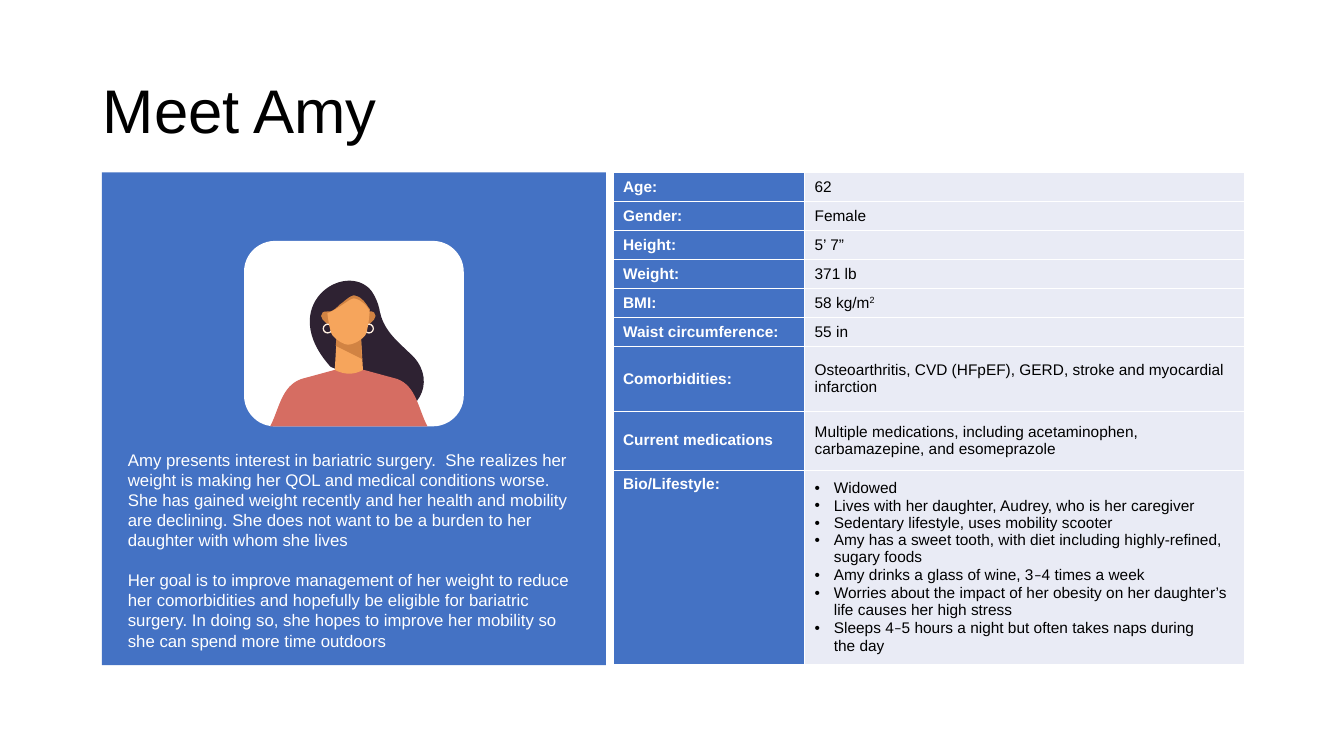
"""Build the patient profile slide for Amy."""
from itertools import groupby

from lxml.etree import SubElement
from pptx import Presentation
from pptx.dml.color import RGBColor
from pptx.enum.shapes import MSO_SHAPE
from pptx.enum.text import MSO_ANCHOR, MSO_AUTO_SIZE, PP_ALIGN
from pptx.oxml.ns import qn
from pptx.util import Inches, Pt

BLUE, PALE = RGBColor(0x44, 0x72, 0xC4), RGBColor(0xE9, 0xEB, 0xF5)
WHITE, BLACK = RGBColor(0xFF, 0xFF, 0xFF), RGBColor(0, 0, 0)
HAIR, SHIRT = RGBColor(0x2E, 0x22, 0x32), RGBColor(0xD6, 0x6D, 0x62)
SKIN, SHADE = RGBColor(0xF6, 0xA5, 0x5C), RGBColor(0xD1, 0x83, 0x43)
RING = RGBColor(0xFF, 0xEF, 0xE0)

STORY = [
    "Amy presents interest in bariatric surgery.  She realizes her weight is making her QOL and "
    "medical conditions worse.  She has gained weight recently and her health and mobility are "
    "declining. She does not want to be a burden to her daughter with whom she lives",
    "Her goal is to improve management of her weight to reduce her comorbidities and hopefully "
    "be eligible for bariatric surgery. In doing so, she hopes to improve her mobility so she "
    "can spend more time outdoors",
]
HABITS = [
    "Widowed",
    "Lives with her daughter, Audrey, who is her caregiver",
    "Sedentary lifestyle, uses mobility scooter",
    "Amy has a sweet tooth, with diet including highly-refined, sugary foods",
    "Amy drinks a glass of wine, 3–4 times a week",
    "Worries about the impact of her obesity on her daughter’s life causes her high stress",
    "Sleeps 4–5 hours a night but often takes naps during \nthe day",
]
FACTS = [
    ("Age:", ["62"], 0.29),
    ("Gender:", ["Female"], 0.29),
    ("Height:", ["5’ 7”"], 0.29),
    ("Weight:", ["371 lb"], 0.29),
    ("BMI:", ["58 kg/m²"], 0.29),
    ("Waist circumference:", ["55 in"], 0.29),
    ("Comorbidities:", ["Osteoarthritis, CVD (HFpEF), GERD, stroke and myocardial infarction"], 0.65),
    ("Current medications",
     ["Multiple medications, including acetaminophen, carbamazepine, and esomeprazole"], 0.59),
    ("Bio/Lifestyle:", HABITS, 1.95),
]

EAR = [(3.24, 3.21), (3.25, 3.23, 3.29, 3.23, 3.31, 3.21), (3.33, 3.2, 3.33, 3.17, 3.31, 3.15),
       (3.28, 3.11), (3.26, 3.09, 3.23, 3.08, 3.2, 3.1), (3.18, 3.12, 3.18, 3.15, 3.2, 3.17)]
BACK = [
    (HAIR, [(3.28, 3.64), (2.73, 3.03, 3.42, 2.58, 3.68, 2.88), (3.78, 3.02, 3.93, 3.4, 3.33, 3.66)]),
    (HAIR, [(3.77, 3.1), (3.81, 3.29, 3.97, 3.41, 4.06, 3.5),
            (4.33, 3.73, 4.2, 4.1, 3.83, 4.12), (3.42, 3.62)]),
    (SHIRT, [(3.94, 3.76), (3.61, 3.67), (3.32, 3.67), (2.99, 3.76), (2.79, 3.83, 2.77, 4.06, 2.68, 4.23),
             (4.24, 4.23), (4.15, 4.06, 4.13, 3.83, 3.94, 3.76)]),
    (SKIN, [(3.6, 3.67), (3.58, 3.34), (3.34, 3.34), (3.32, 3.67), (3.42, 3.72, 3.51, 3.72, 3.6, 3.67)]),
    (SHADE, [(3.59, 3.56), (3.58, 3.34), (3.34, 3.34), (3.33, 3.43)]),
]
FRONT = [
    (SKIN, [(3.52, 2.87), (3.4, 2.87), (3.33, 2.87, 3.24, 2.91, 3.24, 3.02),
            (3.24, 3.09, 3.27, 3.3, 3.3, 3.33), (3.34, 3.38, 3.42, 3.42, 3.45, 3.42),
            (3.5, 3.42, 3.58, 3.38, 3.62, 3.33), (3.65, 3.3, 3.67, 3.09, 3.67, 3.02),
            (3.67, 2.91, 3.58, 2.87, 3.52, 2.87)]),
    (SHADE, [(3.26, 3.1), (3.3, 3.09, 3.43, 3, 3.46, 2.98), (3.48, 2.97, 3.49, 2.96, 3.51, 2.96),
             (3.53, 2.96, 3.55, 2.97, 3.57, 2.98), (3.63, 3.02, 3.65, 3.05, 3.67, 3.09), (3.67, 3.07),
             (3.65, 3.03, 3.63, 2.98, 3.57, 2.95), (3.55, 2.94, 3.53, 2.93, 3.51, 2.93),
             (3.49, 2.93, 3.48, 2.93, 3.46, 2.94), (3.43, 2.96, 3.4, 2.99, 3.37, 3.02),
             (3.34, 3.04, 3.3, 3.07, 3.26, 3.08), (3.24, 3.09), (3.24, 3.11)]),
    (HAIR, [(3.46, 2.82), (3.27, 2.82, 3.23, 2.95, 3.22, 3.09), (3.27, 3.09),
            (3.31, 3.08, 3.34, 3.05, 3.37, 3.02), (3.4, 3, 3.43, 2.97, 3.46, 2.95),
            (3.48, 2.94, 3.49, 2.93, 3.51, 2.93), (3.53, 2.93, 3.55, 2.94, 3.57, 2.95),
            (3.63, 2.99, 3.65, 3.05, 3.68, 3.08), (3.75, 3.05, 3.67, 2.8, 3.46, 2.82)]),
]


def apply(item, values):
    """Set each named value on the item."""
    for name, value in values.items():
        setattr(item, name, value)


def write(par, text, size, color, bold=False):
    """Write runs, with line breaks, raised digits and dashes in their own font."""
    for mark, group in groupby(text, lambda sign: sign if sign in "–²\n" else ""):
        if mark == "\n":
            par.add_line_break()
            continue
        run = par.add_run()
        run.text = "2" if mark == "²" else "".join(group)
        apply(run.font, {"name": "Calibri" if mark == "–" else "Arial", "size": Pt(size), "bold": bold})
        run.font.color.rgb = color
        if mark == "²":
            run._r.get_or_add_rPr().set("baseline", "30000")


def bullet(par):
    """Give a paragraph a hanging round bullet."""
    props = par._p.get_or_add_pPr()
    apply_to = {"marL": Inches(0.19), "indent": Inches(-0.19)}
    for name, value in apply_to.items():
        props.set(name, str(value))
    SubElement(props, qn("a:buFont"), typeface="Arial")
    SubElement(props, qn("a:buChar"), char="•")


def paint(shape, color):
    """Fill a shape plainly, without line or shadow."""
    shape.shadow.inherit = False
    shape.fill.solid()
    shape.fill.fore_color.rgb = color
    shape.line.fill.background()


def block(shapes, kind, box, color):
    """Add a plain preset shape."""
    shape = shapes.add_shape(kind, *map(Inches, box))
    paint(shape, color)
    return shape


def outline(shapes, parts, color):
    """Add a closed outline of straight lines and cubic curves."""
    dots = [(round(part[i] * 1000), round(part[i + 1] * 1000))
            for part in parts for i in range(0, len(part), 2)]
    maker = shapes.build_freeform(*dots[0], scale=Inches(1) / 1000)
    maker.add_line_segments(dots[1:], close=False)
    shape = maker.convert_to_shape()
    route = shape._element.find(f".//{qn('a:path')}")
    lines = iter(route.findall(qn("a:lnTo")))
    for part in parts[1:]:
        knots = [next(lines) for _ in range(len(part) // 2)]
        if len(knots) == 3:
            curve = SubElement(route, qn("a:cubicBezTo"))
            knots[0].addprevious(curve)
            for knot in knots:
                curve.append(knot[0])
                route.remove(knot)
    SubElement(route, qn("a:close"))
    paint(shape, color)


def flip(parts, axis=3.455):
    """Mirror an outline left to right."""
    return [tuple(v if i % 2 else 2 * axis - v for i, v in enumerate(part)) for part in parts]


def avatar(slide):
    """Draw the woman on her white card."""
    block(slide.shapes, MSO_SHAPE.ROUNDED_RECTANGLE, (2.42, 2.39, 2.18, 1.84), WHITE)
    shapes = slide.shapes.add_group_shape().shapes
    for color, parts in BACK:
        outline(shapes, parts, color)
    for ear, left in ((EAR, 3.2), (flip(EAR), 3.61)):
        outline(shapes, ear, SHADE)
        block(shapes, MSO_SHAPE.DONUT, (left, 3.21, 0.1, 0.1), RING).adjustments[0] = 0.13
    for color, parts in FRONT:
        outline(shapes, parts, color)


def heading(slide):
    """Place and format the title."""
    title = slide.shapes.title
    apply(title, dict(zip(("left", "top", "width", "height"), map(Inches, (0.92, 0.4, 11.5, 1.45)))))
    title.text_frame.vertical_anchor = MSO_ANCHOR.MIDDLE
    par = title.text_frame.paragraphs[0]
    apply(par, {"alignment": PP_ALIGN.LEFT, "line_spacing": 0.9})
    write(par, "Meet Amy", 44, BLACK)


def story(slide):
    """Add the text under the portrait."""
    frame = slide.shapes.add_textbox(*map(Inches, (1.17, 4.41, 4.67, 2.12))).text_frame
    apply(frame, {"word_wrap": True, "auto_size": MSO_AUTO_SIZE.SHAPE_TO_FIT_TEXT})
    for i, text in enumerate(STORY):
        par = frame.add_paragraph() if i else frame.paragraphs[0]
        par.space_before = Pt(14 if i else 0)
        write(par, text, 12, WHITE)


def fill(cell, lines, back, color, bold):
    """Border, fill and write one table cell."""
    for side in ("lnL", "lnR", "lnT", "lnB"):
        line = SubElement(cell._tc.get_or_add_tcPr(), qn(f"a:{side}"), w=str(Pt(1)))
        SubElement(SubElement(line, qn("a:solidFill")), qn("a:srgbClr"), val=str(WHITE))
    cell.fill.solid()
    cell.fill.fore_color.rgb = back
    cell.vertical_anchor = MSO_ANCHOR.MIDDLE
    for i, text in enumerate(lines):
        par = cell.text_frame.add_paragraph() if i else cell.text_frame.paragraphs[0]
        if len(lines) > 1:
            bullet(par)
        write(par, text, 11, color, bold)


def facts(slide):
    """Add the table of patient facts, its rows scaled to the panel height."""
    table = slide.shapes.add_table(len(FACTS), 2, *map(Inches, (6.08, 1.71, 6.26, 4.89))).table
    apply(table, {"first_row": False, "horz_banding": False})
    for col, width in zip(table.columns, (1.9, 4.36)):
        col.width = Inches(width)
    ratio = 4.89 / sum(height for *_, height in FACTS)
    for i, (label, lines, height) in enumerate(FACTS):
        table.rows[i].height = Inches(height * ratio)
        fill(table.cell(i, 0), [label], BLUE, WHITE, True)
        fill(table.cell(i, 1), lines, PALE, BLACK, False)
    table.cell(len(FACTS) - 1, 0).vertical_anchor = MSO_ANCHOR.TOP


def main():
    """Build and save the slide."""
    deck = Presentation()
    apply(deck, {"slide_width": Inches(13.33), "slide_height": Inches(7.5)})
    slide = deck.slides.add_slide(deck.slide_layouts[5])
    block(slide.shapes, MSO_SHAPE.RECTANGLE, (1.01, 1.71, 5, 4.89), BLUE)
    for draw in (heading, facts, story, avatar):
        draw(slide)
    deck.save("out.pptx")


if __name__ == "__main__":
    main()
